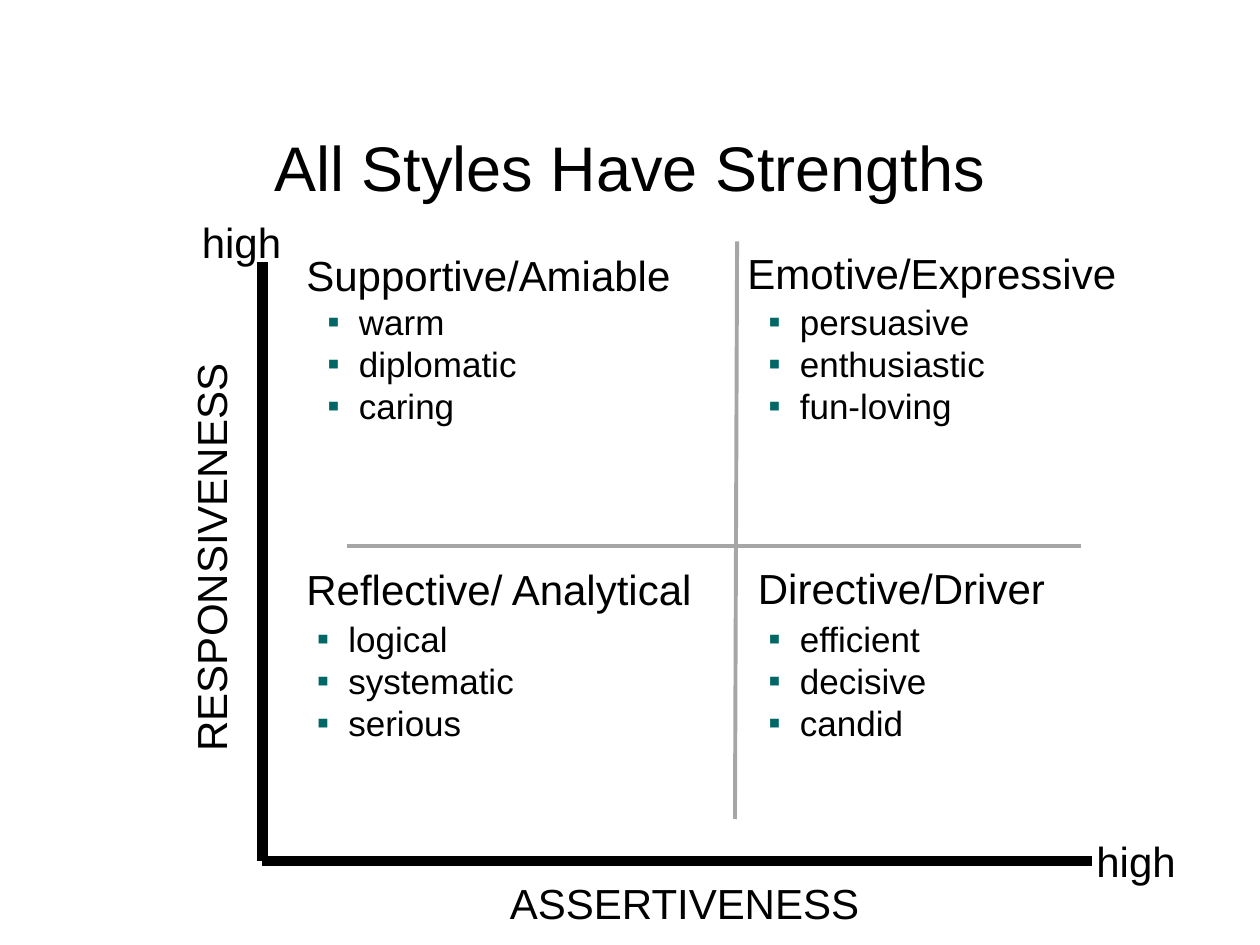
from lxml import etree
from pptx import Presentation
from pptx.dml.color import RGBColor
from pptx.enum.shapes import MSO_CONNECTOR
from pptx.enum.text import MSO_ANCHOR, PP_ALIGN
from pptx.oxml.ns import qn
from pptx.util import Inches, Pt

STRAIGHT = MSO_CONNECTOR.STRAIGHT
TOP = MSO_ANCHOR.TOP
LEFT, CENTER = PP_ALIGN.LEFT, PP_ALIGN.CENTER

COLORS = {"text": "000000", "axis": "000000", "divider": "A6A6A6", "bullet": "006666"}
FONT = "Arial"
INDENT = Inches(0.25)

# The slide is a grid of 120 columns by 90 rows
COLUMNS, ROWS = 120, 90
CELL = Inches(10) / COLUMNS

# Heading, its column and row, strengths, their column and row
QUADRANTS = [
    ("Supportive/Amiable", (28, 23.2), ["warm", "diplomatic", "caring"], (30, 28)),
    ("Emotive/Expressive", (70, 23), ["persuasive", "enthusiastic", "fun-loving"], (72, 28)),
    ("Reflective/ Analytical", (28, 53.1), ["logical", "systematic", "serious"], (29, 58.2)),
    ("Directive/Driver", (71, 53), ["efficient", "decisive", "candid"], (72, 58.2)),
]

# Text, column, row, width in columns, rotation
AXIS_LABELS = [
    ("ASSERTIVENESS", 47, 83, 36.4, 0),
    ("RESPONSIVENESS", 0.2, 50.1, 39.7, 270),
    ("high", 103.2, 79, 10, 0),
    ("high", 18, 20, 10, 0),
]


def grid(cells):
    return round(cells * CELL)


def rgb(name):
    return RGBColor.from_string(COLORS[name])


def place(shape, column, row, width, height):
    shape.left, shape.top = grid(column), grid(row)
    shape.width, shape.height = grid(width), grid(height)


def add_bullet(paragraph):
    properties = paragraph._p.get_or_add_pPr()
    properties.set("marL", str(INDENT))
    properties.set("indent", str(-INDENT))
    color = etree.SubElement(properties, qn("a:buClr"))
    etree.SubElement(color, qn("a:srgbClr"), val=COLORS["bullet"])
    etree.SubElement(properties, qn("a:buFont"), typeface=FONT)
    etree.SubElement(properties, qn("a:buChar"), char="▪")


def write(frame, lines, size=24, align=LEFT, wrap=True, bullets=False):
    frame.word_wrap = wrap
    frame.vertical_anchor = TOP
    for number, line in enumerate(lines):
        paragraph = frame.add_paragraph() if number else frame.paragraphs[0]
        paragraph.text = line
        paragraph.alignment = align
        if bullets:
            add_bullet(paragraph)
        paragraph.font.size = Pt(size)
        paragraph.font.name = FONT
        paragraph.font.color.rgb = rgb("text")


def add_text(slide, lines, column, row, width, height=6, rotation=0, **style):
    box = slide.shapes.add_textbox(0, 0, 0, 0)
    place(box, column, row, width, height)
    box.rotation = rotation
    write(box.text_frame, lines, **style)


def add_line(slide, start, end, color, weight):
    line = slide.shapes.add_connector(STRAIGHT, *map(grid, start + end))
    line.line.color.rgb = rgb(color)
    line.line.width = Pt(weight)
    etree.SubElement(line._element.spPr, qn("a:effectLst"))


def add_title(slide, text):
    title = slide.shapes.title
    place(title, 6, 11, 108, 13)
    write(title.text_frame, [text], size=36, align=CENTER)
    title.text_frame.margin_top = Inches(0.1)


def add_quadrant(slide, heading, heading_at, strengths, strengths_at):
    add_text(slide, [heading], *heading_at, width=41 if heading_at[0] < 60 else 44)
    add_text(slide, strengths, *strengths_at, width=36, height=18, size=20, bullets=True)


def main():
    deck = Presentation()
    deck.slide_width, deck.slide_height = grid(COLUMNS), grid(ROWS)
    slide = deck.slides.add_slide(deck.slide_layouts[5])
    add_title(slide, "All Styles Have Strengths")

    # Axes from their common origin
    origin = (25, 82)
    for end in [(25, 25), (104, 82)]:
        add_line(slide, origin, end, "axis", 6)
    for text, column, row, width, rotation in AXIS_LABELS:
        add_text(slide, [text], column, row, width,
                 rotation=rotation, align=CENTER, wrap=False)

    # Dividers between the four styles
    add_line(slide, (70.2, 23), (70, 78), "divider", 2.25)
    add_line(slide, (33, 52), (103, 52), "divider", 2.25)

    # Styles with their strengths
    for quadrant in QUADRANTS:
        add_quadrant(slide, *quadrant)

    deck.save("out.pptx")


if __name__ == "__main__":
    main()
